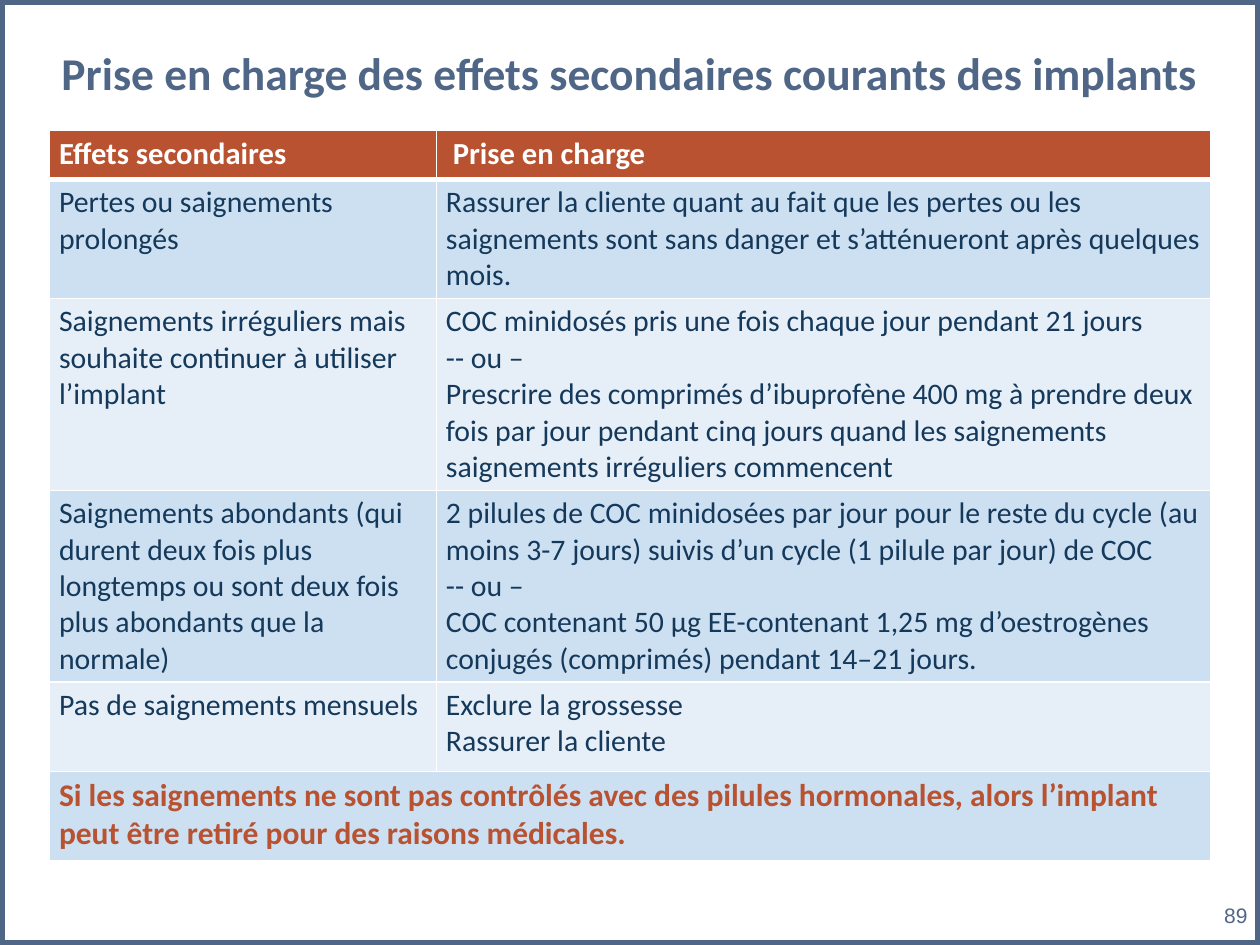
from dataclasses import dataclass

from lxml.etree import SubElement
from pptx import Presentation
from pptx.dml.color import RGBColor
from pptx.enum.shapes import MSO_SHAPE
from pptx.enum.text import MSO_ANCHOR, PP_ALIGN
from pptx.oxml.ns import qn
from pptx.util import Cm, Pt


@dataclass(frozen=True)
class Theme:
    slate: str = "506687"
    rust: str = "B85231"
    navy: str = "15395B"
    white: str = "FFFFFF"
    bands: tuple = ("CDE0F2", "E6EFF8")
    body_font: str = "Calibri"
    number_font: str = "Arial"
    title_size: float = 26
    header_size: float = 17.5
    body_size: float = 17
    warning_size: float = 18
    number_size: float = 12
    frame_width: float = 5.25


@dataclass(frozen=True)
class Box:
    left: float
    top: float
    width: float
    height: float

    def lengths(self):
        return Cm(self.left), Cm(self.top), Cm(self.width), Cm(self.height)


THEME = Theme()
PAGE = Box(0, 0, 25.4, 19.05)
EFFECT_SHARE = 1 / 3
ROW_HEIGHTS = (0.99, 2.38, 3.86, 3.86, 1.8, 1.8)
HEADER = ("Effets secondaires", " Prise en charge")
TREATMENTS = (
    ("Pertes ou saignements prolongés",
     "Rassurer la cliente quant au fait que les pertes ou les saignements "
     "sont sans danger et s’atténueront après quelques mois."),
    ("Saignements irréguliers mais souhaite continuer à utiliser l’implant",
     "COC minidosés pris une fois chaque jour pendant 21 jours\n"
     "-- ou –\n"
     "Prescrire des comprimés d’ibuprofène 400 mg à prendre deux fois par jour "
     "pendant cinq jours quand les saignements saignements irréguliers commencent"),
    ("Saignements abondants (qui durent deux fois plus longtemps ou sont deux "
     "fois plus abondants que la normale)",
     "2 pilules de COC minidosées par jour pour le reste du cycle (au moins "
     "3-7 jours) suivis d’un cycle (1 pilule par jour) de COC\n"
     "-- ou –\n"
     "COC contenant 50 µg EE-contenant 1,25 mg d’oestrogènes conjugés "
     "(comprimés) pendant 14–21 jours."),
    ("Pas de saignements mensuels", "Exclure la grossesse\nRassurer la cliente"),
)
WARNING = ("Si les saignements ne sont pas contrôlés avec des pilules hormonales, "
           "alors l’implant peut être retiré pour des raisons médicales.")


def format_text(frame, size, color, bold=False, font=THEME.body_font, align=PP_ALIGN.LEFT):
    for paragraph in frame.paragraphs:
        paragraph.alignment = align
        for run in paragraph.runs:
            run.font.name = font
            run.font.size = Pt(size)
            run.font.bold = bold
            run.font.color.rgb = RGBColor.from_string(color)


def set_margins(item, horizontal, vertical):
    item.margin_left = item.margin_right = Cm(horizontal)
    item.margin_top = item.margin_bottom = Cm(vertical)


def add_borders(cell, bottom_width):
    properties = cell._tc.get_or_add_tcPr()
    for side, width in (("L", 1), ("R", 1), ("T", 1), ("B", bottom_width)):
        border = SubElement(properties, qn(f"a:ln{side}"), w=str(Pt(width)))
        border_fill = SubElement(border, qn("a:solidFill"))
        SubElement(border_fill, qn("a:srgbClr"), val=THEME.white)


def fill_cell(cell, content, fill, size, color, bold=False, bottom_width=1):
    set_margins(cell, 0.19, 0.1)
    add_borders(cell, bottom_width)
    cell.fill.solid()
    cell.fill.fore_color.rgb = RGBColor.from_string(fill)
    cell.text_frame.text = content
    format_text(cell.text_frame, size, color, bold)


def place_title(slide, box):
    title = slide.shapes.title
    title.left, title.top, title.width, title.height = box.lengths()
    frame = title.text_frame
    frame.text = "Prise en charge des effets secondaires courants des implants"
    frame.vertical_anchor = MSO_ANCHOR.TOP
    set_margins(frame, 0.18, 0.1)
    format_text(frame, THEME.title_size, THEME.slate, True, align=PP_ALIGN.CENTER)


def place_treatments(slide, box):
    table = slide.shapes.add_table(len(ROW_HEIGHTS), 2, *box.lengths()).table
    table.horz_banding = False
    effect_width = box.width * EFFECT_SHARE
    for column, width in zip(table.columns, (effect_width, box.width - effect_width)):
        column.width = Cm(width)
    for row, height in zip(table.rows, ROW_HEIGHTS):
        row.height = Cm(height)

    for column, heading in enumerate(HEADER):
        fill_cell(table.cell(0, column), heading, THEME.rust,
                  THEME.header_size, THEME.white, True, bottom_width=3)
    for row, treatment in enumerate(TREATMENTS, start=1):
        for column, content in enumerate(treatment):
            fill_cell(table.cell(row, column), content, THEME.bands[(row - 1) % 2],
                      THEME.body_size, THEME.navy)

    last = len(ROW_HEIGHTS) - 1
    warning = table.cell(last, 0)
    warning.merge(table.cell(last, 1))
    fill_cell(warning, WARNING, THEME.bands[0], THEME.warning_size, THEME.rust, True)


def place_number(slide, box):
    frame = slide.shapes.add_textbox(*box.lengths()).text_frame
    frame.word_wrap = True
    frame.vertical_anchor = MSO_ANCHOR.MIDDLE
    set_margins(frame, 0.25, 0.13)
    frame.text = "89"
    format_text(frame, THEME.number_size, THEME.slate,
                font=THEME.number_font, align=PP_ALIGN.RIGHT)


def place_frame(slide, box):
    border = slide.shapes.add_shape(MSO_SHAPE.RECTANGLE, *box.lengths())
    border.shadow.inherit = False
    border.fill.background()
    border.line.color.rgb = RGBColor.from_string(THEME.slate)
    border.line.width = Pt(THEME.frame_width)


def main():
    presentation = Presentation()
    presentation.slide_width, presentation.slide_height = Cm(PAGE.width), Cm(PAGE.height)
    slide = presentation.slides.add_slide(presentation.slide_layouts[5])
    place_title(slide, Box(0, 0.81, PAGE.width, 3.1))
    place_treatments(slide, Box(1, 2.63, 23.4, sum(ROW_HEIGHTS)))
    place_number(slide, Box(19.48, 17.93, 5.92, 1.02))
    place_frame(slide, PAGE)
    presentation.save("out.pptx")


if __name__ == "__main__":
    main()
